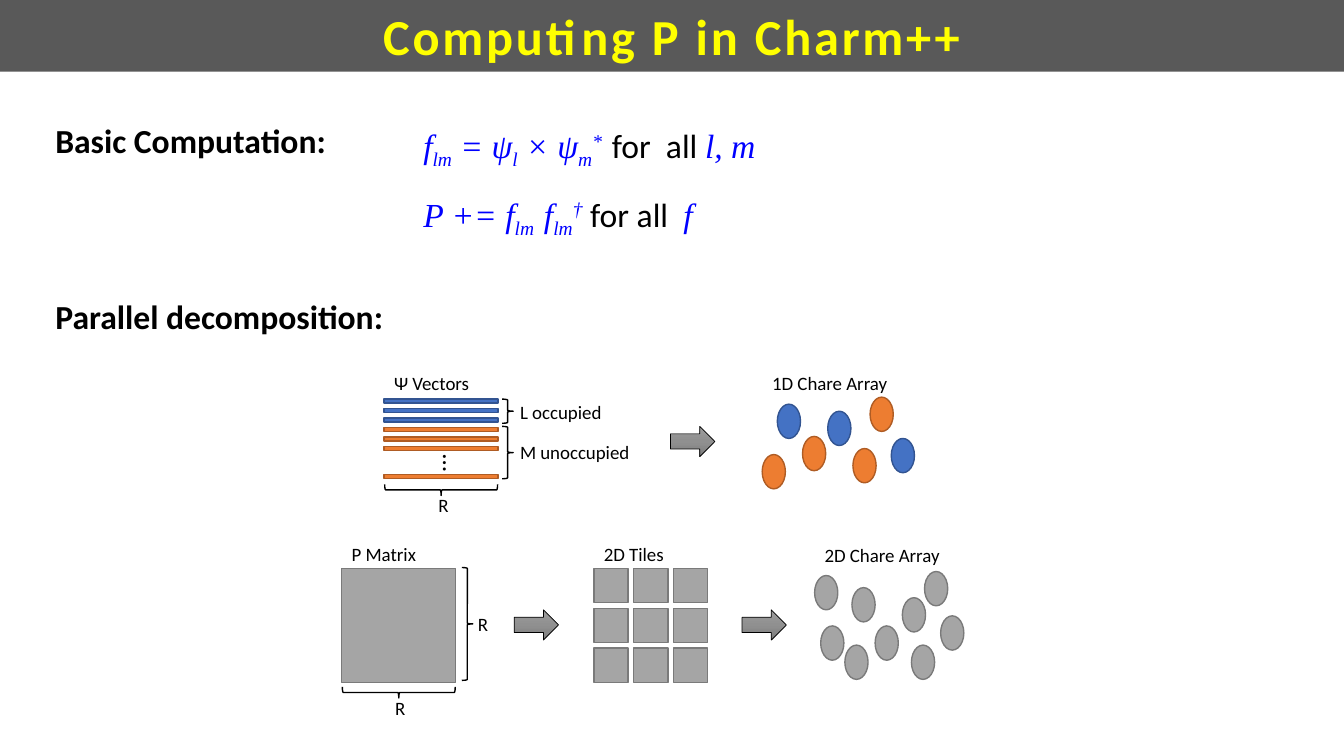
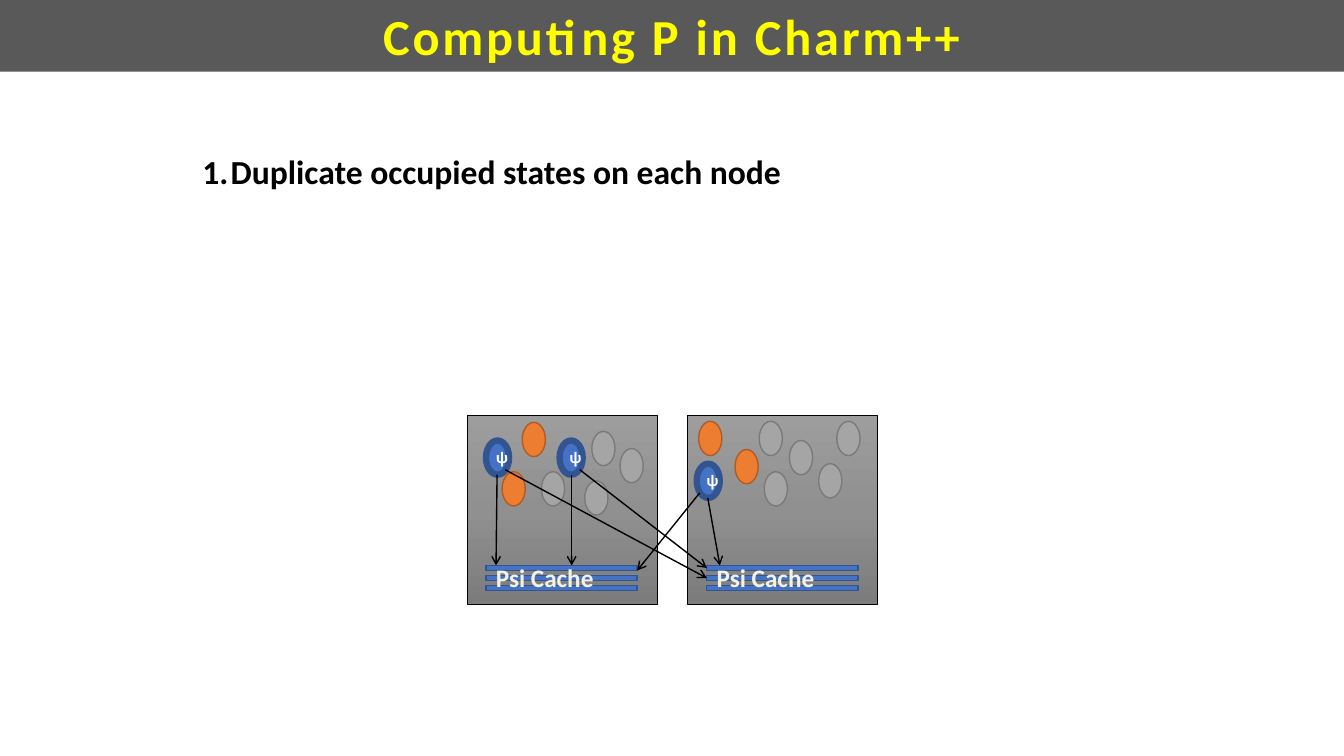
from copy import deepcopy

from lxml import etree
from pptx import Presentation
from pptx.dml.color import RGBColor
from pptx.enum.shapes import MSO_CONNECTOR, MSO_SHAPE
from pptx.enum.text import MSO_ANCHOR, MSO_AUTO_SIZE, PP_ALIGN
from pptx.oxml.ns import qn
from pptx.util import Inches, Pt

RECT, OVAL = MSO_SHAPE.RECTANGLE, MSO_SHAPE.OVAL
ARROW, BRACE = MSO_SHAPE.RIGHT_ARROW, MSO_SHAPE.RIGHT_BRACE
TOP, MIDDLE = MSO_ANCHOR.TOP, MSO_ANCHOR.MIDDLE
LEFT, CENTER = PP_ALIGN.LEFT, PP_ALIGN.CENTER
FIT = MSO_AUTO_SIZE.SHAPE_TO_FIT_TEXT

BLACK = "000000"
BLUE = ("4472C4", "325491")
ORANGE = ("ED7D31", "AF5C24")
GRAY = ("A5A5A5", "7A7A7A")
STEEL = ((0, "9D9D9D"), (0.5, "909090"), (1, "7C7C7C"))
BAND = "595959"
EDGE = "054697"

FONTS = {
    "title": dict(name="Calibri", size=36, bold=True, color="FFFF00"),
    "head": dict(name="Calibri", size=24, bold=True, color=BLACK),
    "label": dict(name="Calibri", size=13.5, color=BLACK),
    "dots": dict(name="Calibri", size=18, color=BLACK),
    "math": dict(name="Times New Roman", size=24, italic=True, color="0000FF"),
    "plain": dict(name="Calibri", size=24, color=BLACK),
    "psi": dict(name="Noto Sans", size=10.5, bold=True, color="FFFFFF"),
    "cache": dict(name="Calibri", size=18, bold=True, color="F4F1E3"),
}
SUB, SUPER = -25, 30

TITLE = "Computing P in Charm++"
MATH = [
    [("f", "math", 0), ("lm", "math", SUB), (" = ψ", "math", 0),
     ("l", "math", SUB), (" × ψ", "math", 0), ("m", "math", SUB),
     ("*  ", "math", SUPER), ("for  all ", "plain", 0), ("l, m", "math", 0)],
    [("P += f", "math", 0), ("lm  ", "math", SUB), ("f", "math", 0),
     ("lm", "math", SUB), ("†", "math", SUPER), (" for all  ", "plain", 0),
     ("f", "math", 0)],
]
LABELS = [
    ("Ψ Vectors", 3.81, 3.64, 0.96), ("L occupied", 5.06, 3.93, 1.02),
    ("M unoccupied", 5.06, 4.32, 1.3), ("R", 4.25, 4.85, 0.31),
    ("1D Chare Array", 7.56, 3.64, 1.36), ("P Matrix", 3.39, 5.33, 0.85),
    ("R", 4.64, 6.03, 0.31), ("R", 3.82, 6.86, 0.31),
    ("2D Tiles", 5.89, 5.33, 0.81), ("2D Chare Array", 8.08, 5.34, 1.36),
]
BRACES = [  # left, top, height, turn
    (4.98, 3.96, 0.24, 0), (4.98, 4.23, 0.52, 0), (4.32, 4.3, 1.12, 90),
    (3.9, 6.31, 1.12, 90), (4.58, 5.63, 1.12, 0),
]
ARROWS = [(6.65, 4.23), (5.1, 6.05), (7.36, 6.05)]
VECTORS = {BLUE: (0, 1, 2), ORANGE: (3, 4, 5, 8)}
CHARES = {
    BLUE: [(7.71, 4.01), (8.21, 4.08), (8.84, 4.35)],
    ORANGE: [(7.56, 4.51), (7.96, 4.33), (8.46, 4.45), (8.63, 3.94)],
    GRAY: [(8.08, 5.71), (8.45, 5.83), (8.95, 5.93), (9.17, 5.67),
           (9.04, 6.4), (9.33, 6.11), (8.14, 6.21), (8.38, 6.4),
           (8.68, 6.21)],
}

NODES = [4.64, 6.82]
PSIS = [(4.82, 4.37), (5.55, 4.37), (6.91, 4.6)]
STATES = {
    ORANGE: [(5.18, 4.19), (4.98, 4.68), (6.93, 4.18), (7.29, 4.46)],
    GRAY: [(5.87, 4.28), (6.15, 4.45), (7.83, 4.37), (8.3, 4.18),
           (7.58, 4.68), (8.12, 4.6), (5.37, 4.68), (5.8, 4.77),
           (7.53, 4.18)],
}
CACHES = [4.82, 7.01]
LINKS = [  # from, to, (cache, bar) joined at its left side
    ((4.93, 4.71), (4.92, 5.61), None),
    ((5.01, 4.66), (7.01, 5.74), (1, 1)),
    ((5.67, 4.71), (5.67, 5.61), None),
    ((5.75, 4.66), (7.01, 5.64), (1, 0)),
    ((6.94, 4.89), (6.32, 5.66), None),
    ((7.02, 4.94), (7.14, 5.61), None),
]


def rgb(code):
    return RGBColor.from_string(code)


def add_run(para, text, kind, base=0):
    run = para.add_run()
    run.text = text
    for key, value in FONTS[kind].items():
        if key == "color":
            run.font.color.rgb = rgb(value)
        else:
            setattr(run.font, key, Pt(value) if key == "size" else value)
    if base:
        run.font._element.set("baseline", str(base * 1000))
    return run


def set_text(frame, text, kind, **form):
    """Write one paragraph; form holds text frame values."""
    para = frame.paragraphs[0]
    para.alignment = form.pop("align", LEFT)
    for key, value in form.items():
        setattr(frame, key, value)
    return add_run(para, text, kind)


def add_box(slide, *place):
    return slide.shapes.add_textbox(*map(Inches, place))


def add_label(slide, text, kind, *place, **form):
    """Add a text box that keeps its text on one line."""
    box = add_box(slide, *place)
    form = dict(word_wrap=False, auto_size=FIT) | form
    return box, set_text(box.text_frame, text, kind, **form)


def shade(fill):
    """Fill from light at the top to dark at the bottom."""
    fill.gradient()
    fill.gradient_angle = 270
    stops = fill.gradient_stops[0]._gs.getparent()
    stops.insert(1, deepcopy(stops[0]))
    for stop, (spot, code) in zip(fill.gradient_stops, STEEL):
        stop.position = spot
        stop.color.rgb = rgb(code)


def add_form(slide, kind, place, fill=None, line=None, width=1):
    form = slide.shapes.add_shape(kind, *map(Inches, place))
    form.shadow.inherit = False
    if fill is STEEL:
        shade(form.fill)
    elif fill:
        form.fill.solid()
        form.fill.fore_color.rgb = rgb(fill)
    else:
        form.fill.background()
    if line:
        form.line.color.rgb = rgb(line)
        form.line.width = Pt(width)
    else:
        form.line.fill.background()
    return form


def add_ovals(slide, groups):
    for pair, spots in groups.items():
        for x, y in spots:
            add_form(slide, OVAL, (x, y, 0.23, 0.34), *pair)


def add_link(slide, start, end):
    ends = map(Inches, start + end)
    link = slide.shapes.add_connector(MSO_CONNECTOR.STRAIGHT, *ends)
    link.line.color.rgb = rgb(BLACK)
    link.line.width = Pt(1)
    etree.SubElement(link.line._get_or_add_ln(), qn("a:tailEnd"), type="arrow")
    etree.SubElement(link._element.spPr, qn("a:effectLst"))
    return link


def add_edge(run):
    """Outline the letters of a run."""
    ln = etree.Element(qn("a:ln"), w=str(Pt(1)))
    fill = etree.SubElement(ln, qn("a:solidFill"))
    etree.SubElement(fill, qn("a:srgbClr"), val=EDGE)
    run.font._element.insert(0, ln)


def add_slide(deck):
    slide = deck.slides.add_slide(deck.slide_layouts[6])
    band = add_form(slide, RECT, (0, 0, 13.33, 0.71), BAND)
    run = set_text(band.text_frame, TITLE, "title", align=CENTER,
                   vertical_anchor=TOP, word_wrap=True)
    run.font._element.set("spc", "200")
    return slide


def add_math(slide):
    frame = add_box(slide, 4.1, 0.96, 4.46, 1.31).text_frame
    frame.word_wrap = True
    frame.add_paragraph()
    for para, parts in zip(frame.paragraphs, MATH):
        para.line_spacing = 1.5
        for part in parts:
            add_run(para, *part)


def draw_split(deck):
    slide = add_slide(deck)
    box, _ = add_label(slide, "Basic Computation:", "head",
                       0.45, 1.05, 8.13, 0.47, word_wrap=True,
                       auto_size=MSO_AUTO_SIZE.NONE, vertical_anchor=MIDDLE)
    box.text_frame.paragraphs[0].line_spacing = 1.5
    add_math(slide)
    add_label(slide, "Parallel decomposition:", "head", 0.45, 2.89, 3.49, 0.5)

    for text, x, y, width in LABELS:
        add_label(slide, text, "label", x, y, width, 0.33)
    for x, y, height, turn in BRACES:
        brace = add_form(slide, BRACE, (x, y, 0.11, height), None, BLACK)
        brace.rotation = turn
    for spot in ARROWS:
        add_form(slide, ARROW, (*spot, 0.44, 0.3), STEEL, BLACK, 0.5)

    step = 0.75 / 8
    for pair, rows in VECTORS.items():
        for row in rows:
            add_form(slide, RECT, (3.81, 3.96 + row * step, 1.13, 0.04), *pair)
    dots, _ = add_label(slide, "…", "dots", 4.19, 4.43, 0.61, 0.33,
                        align=CENTER, vertical_anchor=MIDDLE)
    dots.text_frame._txBody.bodyPr.set("vert", "vert")

    side, tile = 1.13, 0.34
    add_form(slide, RECT, (3.39, 5.64, side, side), *GRAY)
    pitch = (side - tile) / 2
    for row in range(3):
        for col in range(3):
            spot = (5.89 + col * pitch, 5.64 + row * pitch)
            add_form(slide, RECT, (*spot, tile, tile), *GRAY)
    add_ovals(slide, CHARES)


def draw_copy(deck):
    slide = add_slide(deck)
    box, _ = add_label(slide, "Duplicate occupied states on each node", "head",
                       1.91, 1.45, 6.61, 0.5, word_wrap=True)
    props = box.text_frame.paragraphs[0]._p.get_or_add_pPr()
    props.set("marL", str(Inches(0.28)))
    props.set("indent", str(Inches(-0.28)))
    etree.SubElement(props, qn("a:buAutoNum"), type="arabicPeriod")

    for x in NODES:
        add_form(slide, RECT, (x, 4.12, 1.88, 1.88), STEEL, BLACK, 0.5)
    for spot in PSIS:
        oval = add_form(slide, OVAL, (*spot, 0.23, 0.34), *BLUE, 4.5)
        set_text(oval.text_frame, "ψ", "psi", align=CENTER,
                 vertical_anchor=MIDDLE)
    add_ovals(slide, STATES)

    bars = [[add_form(slide, RECT, (x, 5.61 + row * 0.1, 1.5, 0.05), *BLUE)
             for row in range(3)] for x in CACHES]
    for start, end, goal in LINKS:
        link = add_link(slide, start, end)
        if goal:
            cache, row = goal
            link.end_connect(bars[cache][row], 1)
    for x in CACHES:
        _, run = add_label(slide, "Psi Cache", "cache", x, 5.53, 1.18, 0.4,
                           vertical_anchor=MIDDLE)
        add_edge(run)


def main():
    deck = Presentation()
    deck.slide_width, deck.slide_height = Inches(13.33), Inches(7.5)
    draw_split(deck)
    draw_copy(deck)
    deck.save("out.pptx")


if __name__ == "__main__":
    main()
